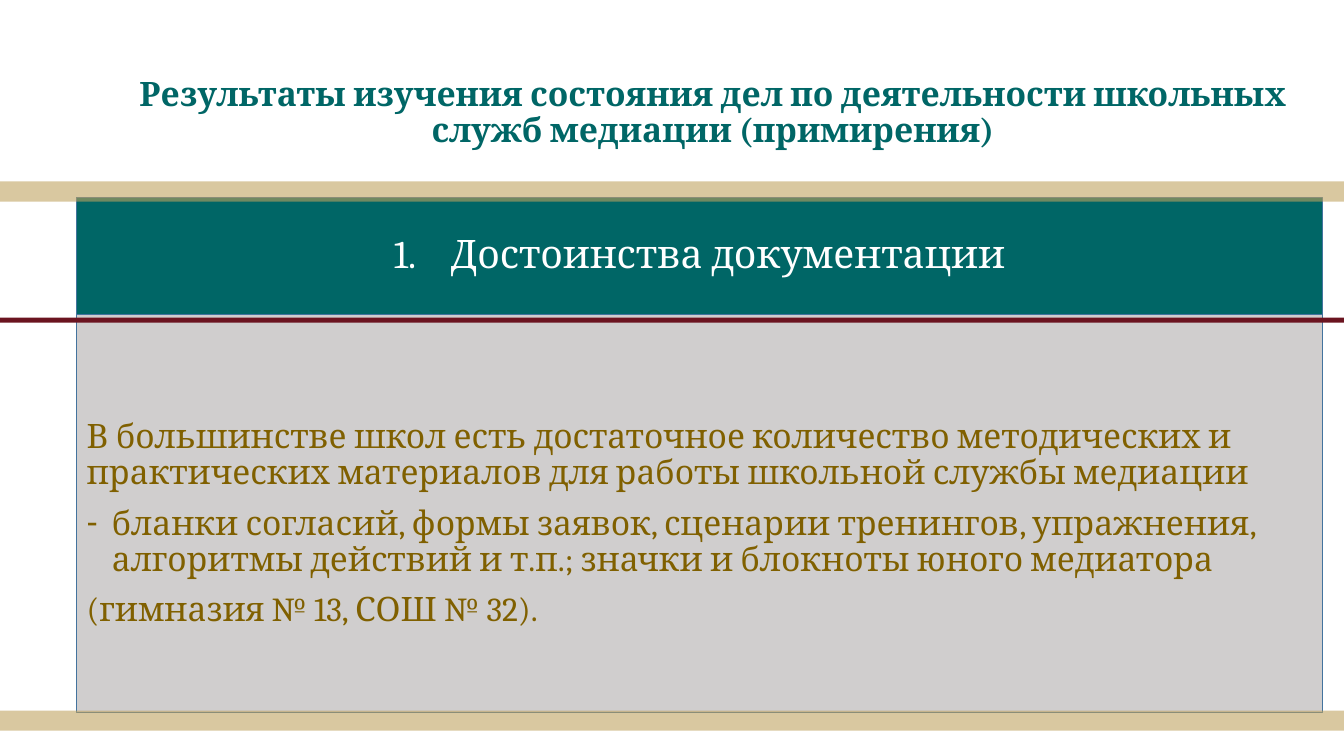
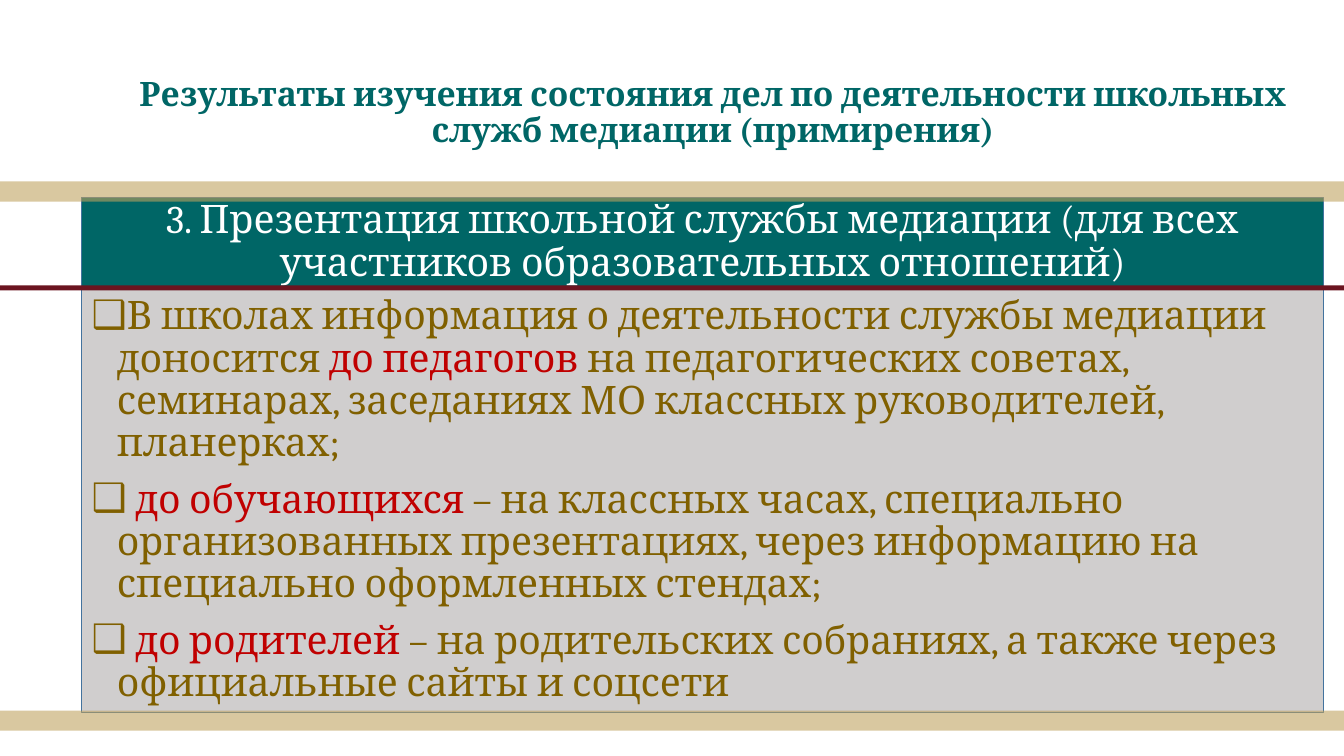
"""Build two slides on the results of a review of school mediation services."""
import lxml.etree
import pptx
import pptx.dml.color
import pptx.enum.shapes
import pptx.enum.text
import pptx.oxml.ns
import pptx.util

Pt = pptx.util.Pt
qn = pptx.oxml.ns.qn
Align = pptx.enum.text.PP_ALIGN
Rgb = pptx.dml.color.RGBColor.from_string


class Theme:
    font = "Cambria"
    teal, gold, red = "006666", "806000", "C00000"
    gray, edge, sand, wine, white = "D0CECE", "43739E", "BFA25E", "6B1420", "FFFFFF"
    small, large = 24, 28
    alpha = 59000
    pitch, gap = 0.9, 10


def paint(shape, fill, edge=None):
    shape.fill.solid()
    shape.fill.fore_color.rgb = Rgb(fill)
    if edge:
        shape.line.color.rgb = Rgb(edge)
        shape.line.width = Pt(1)
    else:
        shape.line.fill.background()


def write(frame, items, size, tints, align, bold=False):
    frame.word_wrap = True
    frame.auto_size = pptx.enum.text.MSO_AUTO_SIZE.NONE
    frame.vertical_anchor = pptx.enum.text.MSO_ANCHOR.MIDDLE
    for row, (tag, value, indent, parts) in enumerate(items):
        para = frame.add_paragraph() if row else frame.paragraphs[0]
        props = para._p.get_or_add_pPr()
        props.set("marL", str(Pt(indent)))
        props.set("indent", str(Pt(-indent)))
        mark = lxml.etree.SubElement(props, qn("a:" + tag))
        if value:
            mark.set("type" if tag == "buAutoNum" else "char", value)
        para.alignment = align
        para.line_spacing = Theme.pitch
        para.space_before = Pt(Theme.gap if row else 0)
        for spot, part in enumerate(parts):
            run = para.add_run()
            run.text = part
            run.font.name = Theme.font
            run.font.size = Pt(size)
            run.font.bold = bold
            run.font.color.rgb = Rgb(tints[spot % len(tints)])


title = "Результаты изучения состояния дел по деятельности школьных служб медиации (примирения)"
pages = [
    {
        "body": (54.7, 196.6, 889.9, 312.5),
        "head": (54.7, 141.1, 889.9, 83.5),
        "rule": (0, 226.8),
        "inset": 47,
        "size": Theme.small,
        "label": ("buAutoNum", "arabicPeriod", 40.5, ["Достоинства документации"]),
        "items": [
            ("buNone", None, 0, ["В большинстве школ есть достаточное количество методических и практических материалов для работы школьной службы медиации"]),
            ("buChar", "-", 18, ["бланки согласий, формы заявок, сценарии тренингов, упражнения, алгоритмы действий и т.п.; значки и блокноты юного медиатора"]),
            ("buNone", None, 0, ["(гимназия № 13, СОШ № 32)."]),
        ],
    },
    {
        "body": (58.3, 144.7, 887, 364.3),
        "head": (58.3, 141.1, 887, 64.1),
        "rule": (0, 203.8),
        "inset": 65,
        "size": Theme.large,
        "label": ("buNone", None, 0, ["3. Презентация школьной службы медиации (для всех участников образовательных отношений)"]),
        "items": [
            ("buChar", "❑", 18, [
                "В школах информация о деятельности службы медиации доносится ",
                "до педагогов ",
                "на педагогических советах, семинарах, заседаниях МО классных руководителей, планерках;",
            ]),
            ("buChar", "❑", 18, [
                " ",
                "до обучающихся ",
                "– на классных часах, специально организованных презентациях, через информацию на специально оформленных стендах;",
            ]),
            ("buChar", "❑", 18, [
                " ",
                "до родителей ",
                "– на родительских собраниях, а также через официальные сайты и соцсети",
            ]),
        ],
    },
]

deck = pptx.Presentation()
deck.slide_width, deck.slide_height = Pt(960), Pt(540)

for page in pages:
    slide = deck.slides.add_slide(deck.slide_layouts[1])
    top, body = slide.placeholders
    for shape, place in ((top, (58.3, 28.8, 901.7, 104.4)), (body, page["body"])):
        shape.left, shape.top, shape.width, shape.height = map(Pt, place)
    write(top.text_frame, [("buNone", None, 0, [title])], Theme.small, [Theme.teal], Align.CENTER, True)

    paint(body, Theme.gray, Theme.edge)
    body.text_frame.margin_top = Pt(page["inset"])
    write(body.text_frame, page["items"], page["size"], [Theme.gold, Theme.red], Align.LEFT)

    blocks = [
        (page["head"], Theme.teal, Theme.edge),
        ((0, 129.6, 960, 14.4), Theme.sand, None),
        ((0, 507.6, 960, 14.4), Theme.sand, None),
        ((*page["rule"], 960, 3.6), Theme.wine, None),
    ]
    for place, fill, edge in blocks:
        block = slide.shapes.add_shape(pptx.enum.shapes.MSO_SHAPE.RECTANGLE, *map(Pt, place))
        block.shadow.inherit = False
        paint(block, fill, edge)
        if fill == Theme.teal:
            write(block.text_frame, [page["label"]], Theme.large, [Theme.white], Align.CENTER)
        if fill == Theme.sand:
            tint = block._element.spPr.find(qn("a:solidFill"))[0]
            lxml.etree.SubElement(tint, qn("a:alpha")).set("val", str(Theme.alpha))

deck.save("out.pptx")
